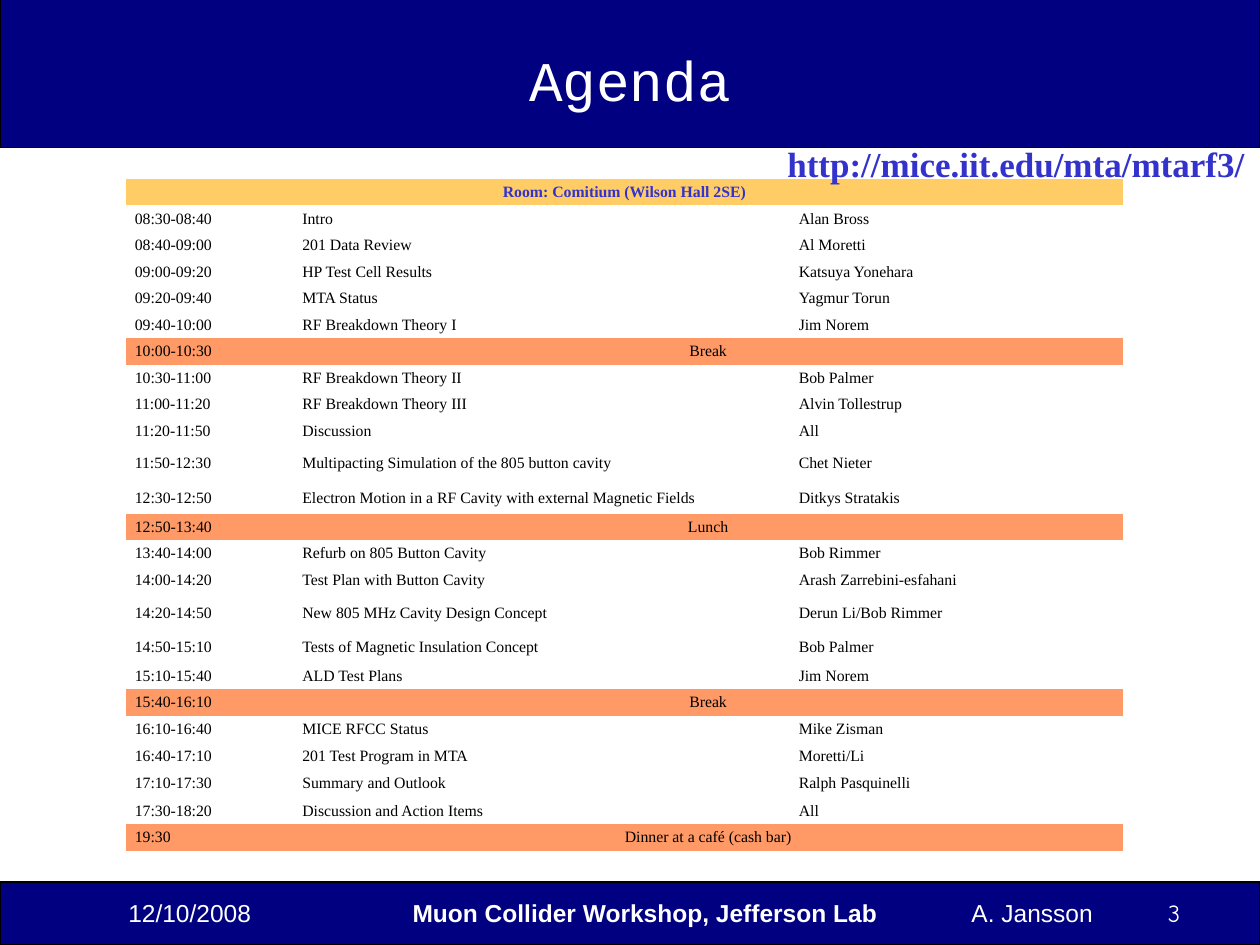
from lxml import etree
from pptx import Presentation
from pptx.dml.color import RGBColor
from pptx.enum import shapes, text
from pptx.oxml.ns import qn
from pptx.util import Inches, Pt

NAVY = RGBColor(0x00, 0x00, 0x80)
BLUE = RGBColor(0x33, 0x33, 0xCC)
GOLD = RGBColor(0xFF, 0xCC, 0x66)
ORANGE = RGBColor(0xFF, 0x99, 0x66)
WHITE = RGBColor(0xFF, 0xFF, 0xFF)
BLACK = RGBColor(0x00, 0x00, 0x00)

SERIF = "Times New Roman"
CENTER = text.PP_ALIGN.CENTER
LEFT = text.PP_ALIGN.LEFT
NO_GRID_STYLE = "{2D5ABB26-0587-4C30-8999-92F81FD0307C}"

ROOM = "Room: Comitium (Wilson Hall 2SE)"
ROW_HEIGHT = 0.21
SESSIONS = [
    ("08:30-08:40", "Intro", "Alan Bross"),
    ("08:40-09:00", "201 Data Review", "Al Moretti"),
    ("09:00-09:20", "HP Test Cell Results", "Katsuya Yonehara"),
    ("09:20-09:40", "MTA Status", "Yagmur Torun"),
    ("09:40-10:00", "RF Breakdown Theory I", "Jim Norem"),
    ("10:00-10:30", "Break"),
    ("10:30-11:00", "RF Breakdown Theory II", "Bob Palmer"),
    ("11:00-11:20", "RF Breakdown Theory III", "Alvin Tollestrup"),
    ("11:20-11:50", "Discussion", "All"),
    ("11:50-12:30", "Multipacting Simulation of the 805 button cavity", "Chet Nieter"),
    ("12:30-12:50", "Electron Motion in a RF Cavity with external Magnetic Fields",
     "Ditkys Stratakis"),
    ("12:50-13:40", "Lunch"),
    ("13:40-14:00", "Refurb on 805 Button Cavity", "Bob Rimmer"),
    ("14:00-14:20", "Test Plan with Button Cavity", "Arash Zarrebini-esfahani"),
    ("14:20-14:50", "New 805 MHz Cavity Design Concept", "Derun Li/Bob Rimmer"),
    ("14:50-15:10", "Tests of Magnetic Insulation Concept", "Bob Palmer"),
    ("15:10-15:40", "ALD Test Plans", "Jim Norem"),
    ("15:40-16:10", "Break"),
    ("16:10-16:40", "MICE RFCC Status", "Mike Zisman"),
    ("16:40-17:10", "201 Test Program in MTA", "Moretti/Li"),
    ("17:10-17:30", "Summary and Outlook", "Ralph Pasquinelli"),
    ("17:30-18:20", "Discussion and Action Items", "All"),
    ("19:30", "Dinner at a café (cash bar)"),
]
SPECIAL_HEIGHTS = {
    "11:50-12:30": 0.3, "12:30-12:50": 0.25,
    "14:20-14:50": 0.31, "14:50-15:10": 0.24,
    "16:40-17:10": 0.22, "17:10-17:30": 0.22,
}


def style_font(font, name, size, color, bold=False):
    font.name, font.size, font.bold = name, Pt(size), bold
    font.color.rgb = color


def add_bar(page, top, height):
    bar = page.shapes.add_shape(shapes.MSO_SHAPE.RECTANGLE, 0, Inches(top),
                                Inches(10), Inches(height))
    bar.shadow.inherit = False
    bar.fill.solid()
    bar.fill.fore_color.rgb = NAVY
    bar.line.color.rgb = BLACK
    bar.line.width = Pt(0.75)


def add_text(page, place, content, name, size, color, align=LEFT, bold=False, wrap=True):
    box = page.shapes.add_textbox(*(Inches(value) for value in place))
    box.text_frame.word_wrap = wrap
    box.text_frame.text = content
    para = box.text_frame.paragraphs[0]
    para.alignment = align
    for span in para.runs:
        style_font(span.font, name, size, color, bold)
    return box


def add_author(page):
    """Add the author's name with the page number at a tab stop."""
    box = add_text(page, (7.5, 7.08, 2.08, 0.5), "A. Jansson\t", "Arial", 14, WHITE)
    box.text_frame.margin_left = Inches(0.21)
    para = box.text_frame.paragraphs[0]
    tabs = etree.SubElement(para._p.get_or_add_pPr(), qn("a:tabLst"))
    etree.SubElement(tabs, qn("a:tab"), pos=str(Inches(1.56)), algn="l")
    number = para.add_run()
    number.text = "3"
    style_font(number.font, "Comic Neue", 14, WHITE)


def fill_cell(cell, content, fill=None, align=LEFT, color=BLACK, bold=False):
    cell.margin_left = cell.margin_right = Inches(0.07)
    cell.margin_top = cell.margin_bottom = Inches(0.03)
    cell.vertical_anchor = text.MSO_ANCHOR.MIDDLE
    if fill is None:
        cell.fill.background()
    else:
        cell.fill.solid()
        cell.fill.fore_color.rgb = fill
    cell.text_frame.text = content
    para = cell.text_frame.paragraphs[0]
    para.alignment = align
    style_font(para.font, SERIF, 9, color, bold)
    for span in para.runs:
        style_font(span.font, SERIF, 9, color, bold)


def add_agenda(page):
    heights = [ROW_HEIGHT] + [SPECIAL_HEIGHTS.get(session[0], ROW_HEIGHT)
                              for session in SESSIONS]
    table = page.shapes.add_table(len(heights), 3, Inches(1), Inches(1.42), Inches(7.91),
                                  Inches(sum(heights))).table
    table.first_row = table.horz_banding = False
    table._tbl.tblPr.find(qn("a:tableStyleId")).text = NO_GRID_STYLE
    for column, width in zip(table.columns, (1.33, 3.94, 2.64)):
        column.width = Inches(width)
    for row, height in zip(table.rows, heights):
        row.height = Inches(height)

    for column in range(3):
        fill_cell(table.cell(0, column), "" if column else ROOM, GOLD, CENTER, BLUE, True)
    table.cell(0, 0).merge(table.cell(0, 2))
    for index, session in enumerate(SESSIONS, 1):
        pause = len(session) == 2
        contents = (*session, "") if pause else session
        for column, content in enumerate(contents):
            fill_cell(table.cell(index, column), content, ORANGE if pause else None,
                      CENTER if pause and column else LEFT)
        if pause:
            table.cell(index, 1).merge(table.cell(index, 2))


def main():
    deck = Presentation()
    deck.slide_width, deck.slide_height = Inches(10), Inches(7.5)
    page = deck.slides.add_slide(deck.slide_layouts[6])
    add_bar(page, 7, 0.5)
    add_bar(page, -0.01, 1.18)
    title = add_text(page, (1.25, 0.21, 7.5, 0.83), "Agenda", "Courier New", 32, WHITE, CENTER)
    title.text_frame.vertical_anchor = text.MSO_ANCHOR.MIDDLE
    title.fill.solid()
    title.fill.fore_color.rgb = NAVY
    add_text(page, (0.92, 7.08, 1.83, 0.5), "12/10/2008", "Arial", 14, WHITE)
    add_text(page, (2.83, 7.08, 4.58, 0.5), "Muon Collider Workshop, Jefferson Lab",
             "Arial", 14, WHITE, CENTER, bold=True)
    add_author(page)
    add_agenda(page)
    add_text(page, (6.15, 1.08, 3.85, 0.44), "http://mice.iit.edu/mta/mtarf3/", SERIF, 20,
             BLUE, bold=True, wrap=False)
    deck.save("out.pptx")


if __name__ == "__main__":
    main()
